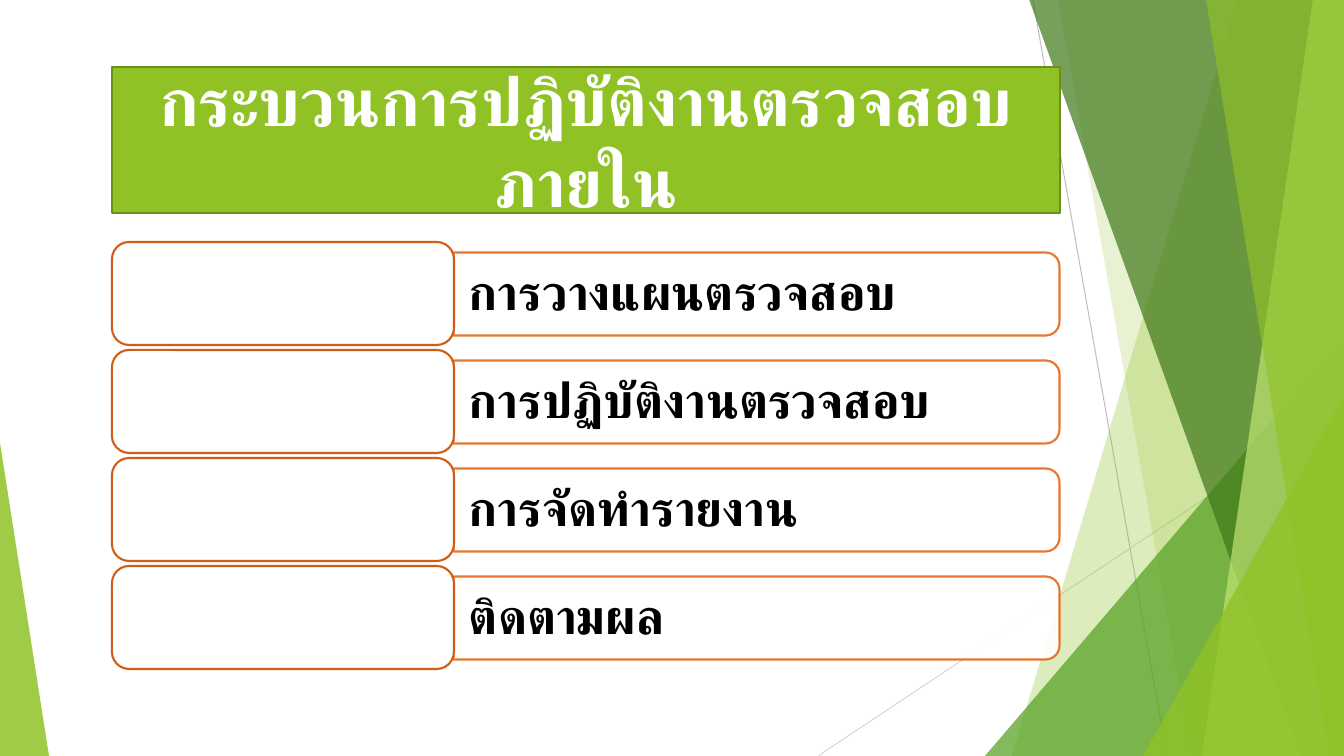
from typing import NamedTuple

from lxml.etree import SubElement
from pptx import Presentation
from pptx.dml.color import RGBColor
from pptx.enum.shapes import MSO_CONNECTOR, MSO_SHAPE
from pptx.enum.text import MSO_ANCHOR, MSO_AUTO_SIZE, PP_ALIGN
from pptx.oxml.ns import qn
from pptx.util import Emu, Pt

SCALE = 914400 / 100.8
WIDTH, HEIGHT = 1344, 756
FONT = "Lato"
WHITE = RGBColor(0xFF, 0xFF, 0xFF)
BLACK = RGBColor(0, 0, 0)
LIME = RGBColor(0x90, 0xC2, 0x26)
PALE = RGBColor(0xC0, 0xE4, 0x74)
GREEN = RGBColor(0x54, 0xA0, 0x21)
DARK = RGBColor(0x3F, 0x78, 0x19)
OLIVE = RGBColor(0x6B, 0x90, 0x1C)
ORANGE = RGBColor(0xE7, 0x66, 0x18)
RUST = RGBColor(0xD2, 0x5D, 0x16)
GREY = RGBColor(0xBF, 0xBF, 0xBF)
SILVER = RGBColor(0xD9, 0xD9, 0xD9)


class Ray(NamedTuple):
    start: tuple[int, int]
    end: tuple[int, int]
    color: RGBColor


class Band(NamedTuple):
    top: int
    foot: int
    color: RGBColor
    alpha: int


class Wedge(NamedTuple):
    left: int
    top: int
    width: int
    apex: int
    color: RGBColor
    alpha: int


RAYS = [
    Ray((1033, 0), (1167, HEIGHT), GREY),
    Ray((WIDTH, 406), (818, HEIGHT), SILVER),
]
DECOR = [
    Band(1238, 1012, LIME, 30),
    Band(1058, 1192, LIME, 20),
    Wedge(985, 336, 359, 1, GREEN, 72),
    Band(1029, 1301, DARK, 70),
    Band(1313, 1202, PALE, 70),
    Band(1206, 1329, LIME, 65),
    Wedge(1143, 396, 201, 1, LIME, 80),
    Wedge(0, 443, 49, 0, LIME, 85),
]
TITLE = "กระบวนการปฏิบัติงานตรวจสอบภายใน"
STEPS = [
    "การวางแผนตรวจสอบ",
    "การปฏิบัติงานตรวจสอบ",
    "การจัดทำรายงาน",
    "ติดตามผล",
]
LEFT, SPLIT, RIGHT = 112, 454, 1060
FIRST, PITCH, TALL, THIN = 242, 108, 103, 83


def px(*sizes: int) -> list[Emu]:
    return [Emu(round(size * SCALE)) for size in sizes]


def fade(part, alpha: int) -> None:
    color = part._xPr.find(qn("a:solidFill"))[0]
    SubElement(color, qn("a:alpha"), val=str(alpha * 1000))


def paint(shape, color: RGBColor, alpha: int = 100, edge: RGBColor | None = None) -> None:
    shape.shadow.inherit = False
    shape.fill.solid()
    shape.fill.fore_color.rgb = color
    if alpha < 100:
        fade(shape.fill, alpha)
    if edge is None:
        shape.line.fill.background()
    else:
        shape.line.color.rgb = edge
        shape.line.width = Pt(1.5)


def write(frame, text: str, size: int, color: RGBColor, align: PP_ALIGN) -> None:
    frame.text = text
    frame.word_wrap = True
    frame.auto_size = MSO_AUTO_SIZE.NONE
    frame.vertical_anchor = MSO_ANCHOR.MIDDLE
    para = frame.paragraphs[0]
    para.alignment = align
    font = para.font
    font.name, font.size, font.bold = FONT, Pt(size), True
    font.color.rgb = color
    SubElement(font._element, qn("a:cs"), typeface=FONT)


def draw_ray(shapes, ray: Ray) -> None:
    line = shapes.add_connector(MSO_CONNECTOR.STRAIGHT, *px(*ray.start, *ray.end))
    line.line.color.rgb = ray.color
    line.line.width = Pt(0.75)
    SubElement(line._element.spPr, qn("a:effectLst"))


def draw_band(shapes, band: Band) -> None:
    pen = shapes.build_freeform(band.top, -1, scale=SCALE)
    pen.add_line_segments([(WIDTH, -1), (WIDTH, HEIGHT), (band.foot, HEIGHT)])
    paint(pen.convert_to_shape(), band.color, band.alpha)


def draw_wedge(shapes, wedge: Wedge) -> None:
    box = px(wedge.left, wedge.top, wedge.width, HEIGHT - wedge.top)
    shape = shapes.add_shape(MSO_SHAPE.ISOSCELES_TRIANGLE, *box)
    shape.adjustments[0] = wedge.apex
    paint(shape, wedge.color, wedge.alpha)


def draw_title(shapes) -> None:
    title = shapes.title
    title.left, title.top, title.width, title.height = px(LEFT, 67, RIGHT - LEFT, 146)
    paint(title, LIME, edge=OLIVE)
    write(title.text_frame, TITLE, 48, WHITE, PP_ALIGN.CENTER)
    shapes._spTree.append(title._element)


def draw_step(shapes, index: int, text: str) -> None:
    top = FIRST + index * PITCH
    span = RIGHT - SPLIT
    mid = top + TALL // 2 + 1
    box = px((SPLIT + RIGHT - THIN) // 2, mid - span // 2, THIN, span)
    bar = shapes.add_shape(MSO_SHAPE.ROUND_2_SAME_RECTANGLE, *box)
    bar.rotation = 90
    paint(bar, WHITE, 90, ORANGE)
    fade(bar.line.fill, 90)

    label = shapes.add_textbox(*px(SPLIT, mid - 37, span - 4, 75))
    frame = label.text_frame
    frame.margin_left, frame.margin_right = px(15, 15)
    frame.margin_top, frame.margin_bottom = px(7, 7)
    write(frame, text, 35, BLACK, PP_ALIGN.LEFT)
    frame.paragraphs[0].line_spacing = 0.9

    card = shapes.add_shape(
        MSO_SHAPE.ROUNDED_RECTANGLE, *px(LEFT, top, SPLIT - LEFT, TALL)
    )
    paint(card, WHITE, edge=RUST)


def main() -> None:
    deck = Presentation()
    deck.slide_width, deck.slide_height = px(WIDTH, HEIGHT)
    shapes = deck.slides.add_slide(deck.slide_layouts[5]).shapes
    for ray in RAYS:
        draw_ray(shapes, ray)
    for item in DECOR:
        if isinstance(item, Band):
            draw_band(shapes, item)
        else:
            draw_wedge(shapes, item)
    draw_title(shapes)
    for index, text in enumerate(STEPS):
        draw_step(shapes, index, text)
    deck.save("out.pptx")


if __name__ == "__main__":
    main()
